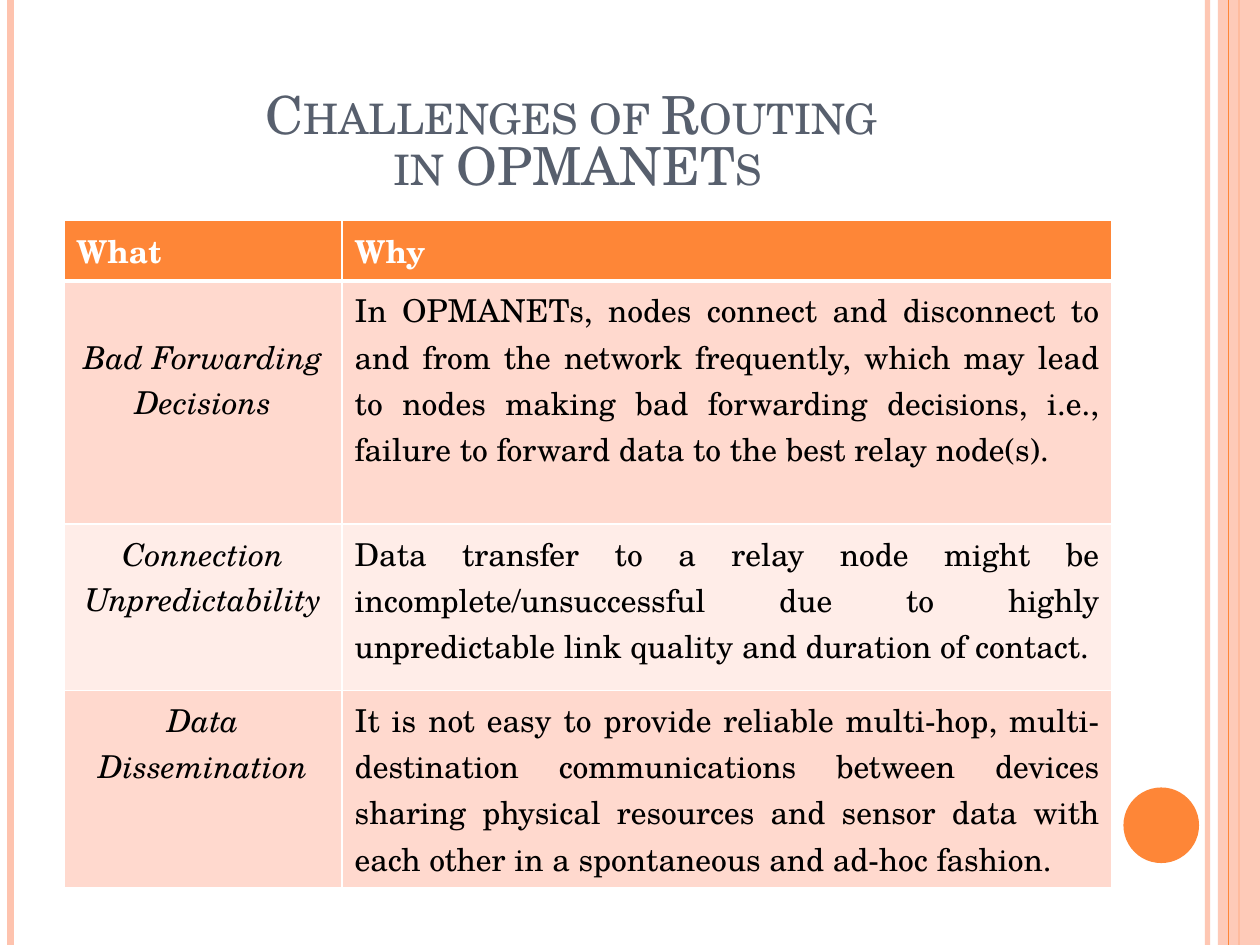
from lxml.etree import SubElement
from pptx import Presentation
from pptx.dml.color import RGBColor
from pptx.enum.shapes import MSO_CONNECTOR as Connector, MSO_SHAPE as Shape
from pptx.enum.text import MSO_ANCHOR as Anchor, PP_ALIGN as Align
from pptx.oxml.ns import qn
from pptx.util import Pt

COLORS = {
    "white": "FFFFFF",
    "black": "000000",
    "slate": "575F6D",
    "orange": "FE8637",
    "peach": "FEC3AE",
    "band_dark": "FFD9CE",
    "band_light": "FFEDE8",
}

STRIPES = [(690, "peach", 3, 93), (6, "peach", 4.5, 100), (708, "orange", 1.5, 100)]

CHALLENGES = [
    ("What", "Why"),
    (
        "Bad Forwarding Decisions",
        "In OPMANETs, nodes connect and disconnect to and from the network frequently, "
        "which may lead to nodes making bad forwarding decisions, i.e., failure to "
        "forward data to the best relay node(s).",
    ),
    (
        "Connection Unpredictability",
        "Data transfer to a relay node might be incomplete/unsuccessful due to highly "
        "unpredictable link quality and duration of contact.",
    ),
    (
        "Data Dissemination",
        "It is not easy to provide reliable multi-hop, multi-destination communications "
        "between devices sharing physical resources and sensor data with each other in "
        "a spontaneous and ad-hoc fashion.",
    ),
]


class SlideBuilder:
    """Holds the style and the current slide, and draws its elements."""

    font_name = "TeX Gyre Schola"
    column_widths = (159, 440)
    row_heights = (34.5, 139, 95, 113)
    row_fills = ("orange", "band_dark", "band_light", "band_dark")
    line_height = 26.4

    def __init__(self, slide):
        self.slide = slide

    def paint(self, fill, color, alpha=100):
        fill.solid()
        fill.fore_color.rgb = RGBColor.from_string(COLORS[color])
        if alpha < 100:
            color_element = fill.fore_color._xFill[0]
            SubElement(color_element, qn("a:alpha"), val=str(alpha * 1000))

    def stripe(self, x, color, width, alpha=100):
        line = self.slide.shapes.add_connector(
            Connector.STRAIGHT, Pt(x), Pt(0), Pt(x), Pt(540)
        )
        line.line.width = Pt(width)
        self.paint(line.line.fill, color, alpha)
        SubElement(line._element.spPr, qn("a:effectLst"))

    def block(self, kind, box, color, alpha=100):
        shape = self.slide.shapes.add_shape(kind, *map(Pt, box))
        shape.shadow.inherit = False
        shape.line.fill.background()
        self.paint(shape.fill, color, alpha)

    def set_text(self, paragraph, text, color, alignment, formats):
        paragraph.text = text
        paragraph.alignment = alignment
        for run in paragraph.runs:
            run.font.color.rgb = RGBColor.from_string(COLORS[color])
            for name, value in {"name": self.font_name, **formats}.items():
                setattr(run.font, name, value)

    def title(self, text, box):
        frame = self.slide.shapes.add_textbox(*map(Pt, box)).text_frame
        settings = {"word_wrap": True, "vertical_anchor": Anchor.BOTTOM, "margin_bottom": 0}
        for name, value in settings.items():
            setattr(frame, name, value)
        paragraph = frame.paragraphs[0]
        paragraph.line_spacing = 0.8
        self.set_text(paragraph, text, "slate", Align.CENTER, {"size": Pt(30)})
        for run in paragraph.runs:
            run.font._element.set("cap", "small")

    def borders(self, cell, row):
        properties = cell._tc.get_or_add_tcPr()
        widths = {"L": 1, "R": 1, "T": 3 if row == 1 else 1, "B": 3 if row == 0 else 1}
        for position, (side, width) in enumerate(widths.items()):
            line = properties.makeelement(qn(f"a:ln{side}"), {"w": str(Pt(width))})
            fill = SubElement(line, qn("a:solidFill"))
            SubElement(fill, qn("a:srgbClr"), val=COLORS["white"])
            properties.insert(position, line)

    def table(self, rows, left, top):
        size = (sum(self.column_widths), sum(self.row_heights))
        table = self.slide.shapes.add_table(
            len(rows), len(rows[0]), *map(Pt, (left, top, *size))
        ).table
        for column, width in zip(table.columns, self.column_widths):
            column.width = Pt(width)
        for row, height in zip(table.rows, self.row_heights):
            row.height = Pt(height)
        for row, texts in enumerate(rows):
            for column, text in enumerate(texts):
                cell = table.cell(row, column)
                header = row == 0
                self.paint(cell.fill, self.row_fills[row])
                self.borders(cell, row)
                body_alignment = Align.JUSTIFY if column else Align.CENTER
                self.set_text(
                    cell.text_frame.paragraphs[0],
                    text,
                    "white" if header else "black",
                    Align.LEFT if header else body_alignment,
                    {"size": Pt(18), "bold": header, "italic": not header and column == 0},
                )
        table.cell(1, 0).margin_top = Pt(3.6 + self.line_height)


def main():
    presentation = Presentation()
    presentation.slide_width, presentation.slide_height = Pt(720), Pt(540)
    builder = SlideBuilder(presentation.slides.add_slide(presentation.slide_layouts[6]))
    for stripe in STRIPES:
        builder.stripe(*stripe)
    builder.block(Shape.RECTANGLE, (696, 0, 24, 540), "peach", 87)
    builder.stripe(702, "orange", 0.75)
    builder.block(Shape.OVAL, (642, 450, 43.2, 43.2), "orange")
    builder.title("Challenges of Routing \vin OPMANETs", (36, 21.6, 588, 90))
    builder.table(CHALLENGES, 36.5, 126)
    presentation.save("out.pptx")


if __name__ == "__main__":
    main()
